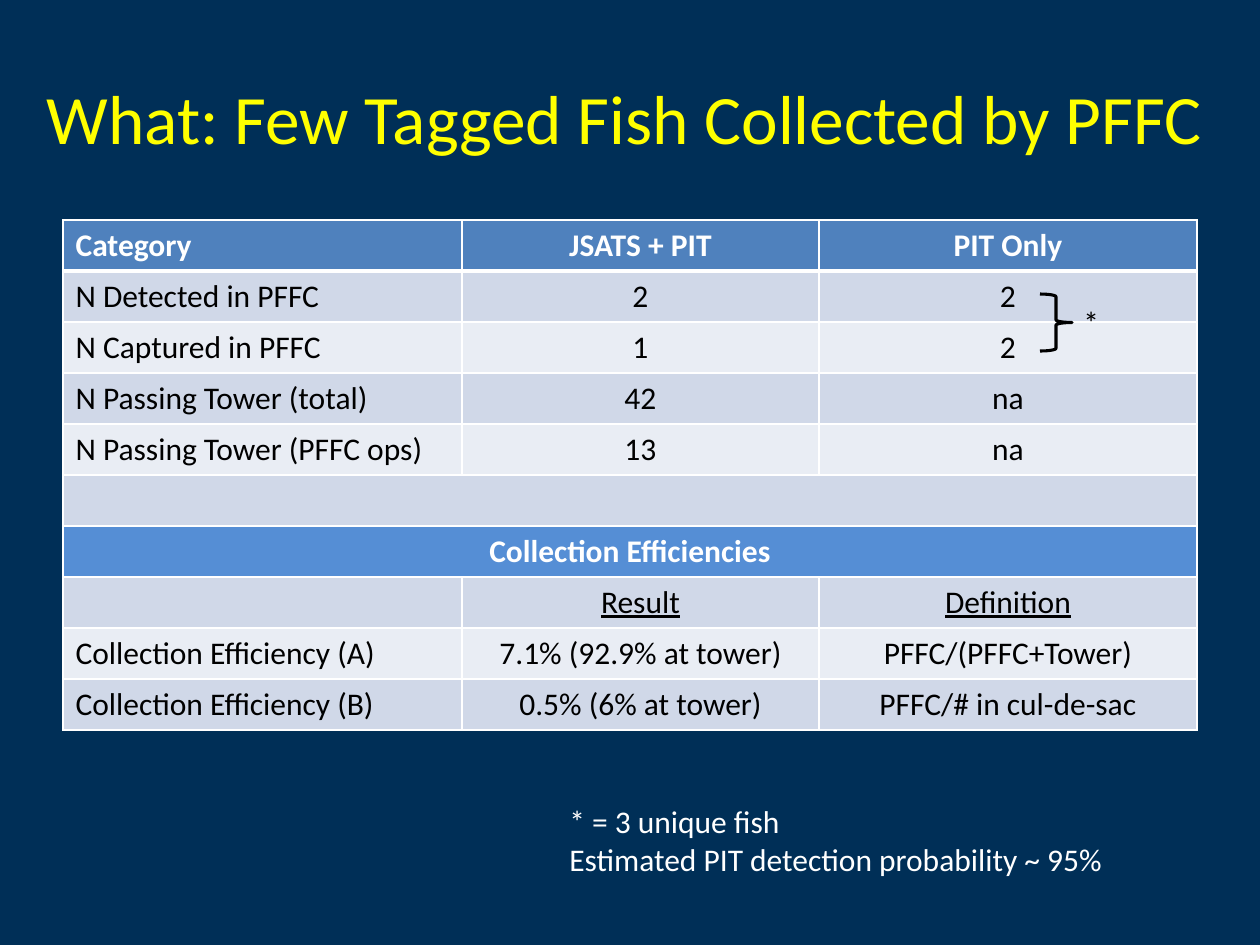
import pptx
import pptx.util
import pptx.dml.color
import pptx.enum.text
import pptx.enum.shapes
import pptx.oxml
import pptx.oxml.ns
from dataclasses import dataclass

ALIGN = pptx.enum.text.PP_ALIGN
ANCHOR = pptx.enum.text.MSO_ANCHOR


@dataclass(frozen=True)
class Theme:
    face: str = "Calibri"
    back: str = "002F57"
    title: str = "FFFF00"
    light: str = "FFFFFF"
    dark: str = "000000"
    head: str = "4F81BD"
    band: str = "558ED5"
    odd: str = "D0D8E8"
    even: str = "E9EDF4"
    big: float = 39.6
    small: float = 18


def px(num):
    return round(num * 914400 / 126)


def tint(code):
    return pptx.dml.color.RGBColor.from_string(code)


def apply(target, form):
    for name, value in form.items():
        setattr(target, name, value)


class Deck:
    def __init__(self, theme):
        self.theme = theme
        self.file = pptx.Presentation()
        apply(self.file, {"slide_width": px(1260), "slide_height": px(945)})
        self.slide = self.file.slides.add_slide(self.file.slide_layouts[6])
        self.paint(self.slide.background.fill, theme.back)

    def paint(self, fill, code):
        fill.solid()
        fill.fore_color.rgb = tint(code)

    def label(self, para, words, size, color, align=ALIGN.LEFT, **form):
        para.alignment = align
        if not words:
            return
        run = para.add_run()
        run.text = words
        apply(run.font, {"name": self.theme.face, "size": pptx.util.Pt(size), **form})
        run.font.color.rgb = tint(color)

    def text(self, place, lines, size, color, align=ALIGN.LEFT, **form):
        frame = self.slide.shapes.add_textbox(*map(px, place)).text_frame
        apply(frame, {"word_wrap": False, **form})
        for num, line in enumerate(lines):
            para = frame.add_paragraph() if num else frame.paragraphs[0]
            self.label(para, line, size, color, align)

    def edge(self, cell, **wide):
        props = cell._tc.get_or_add_tcPr()
        for spot, side in enumerate("LRTB"):
            width = pptx.util.Pt(wide.get(side, 1))
            props.insert(spot, pptx.oxml.parse_xml(
                f'<a:ln{side} {pptx.oxml.ns.nsdecls("a")} w="{width}"><a:solidFill>'
                f'<a:srgbClr val="{self.theme.light}"/></a:solidFill></a:ln{side}>'))

    def table(self, left, top, cols, high, rows):
        look = self.theme
        grid = self.slide.shapes.add_table(
            len(rows), len(cols), px(left), px(top), px(sum(cols)), px(high * len(rows))).table
        for col, wide in zip(grid.columns, cols):
            col.width = px(wide)
        for r, row in enumerate(rows):
            grid.rows[r].height = px(high)
            span = len(row) == 1
            band = span and row[0]
            strong = r == 0 or bool(band)
            under = row[0] == "" and not span
            fill = look.head if r == 0 else look.band if band else look.odd if r % 2 else look.even
            for c in range(len(cols)):
                cell = grid.cell(r, c)
                self.paint(cell.fill, fill)
                self.edge(cell, **{0: {"B": 3}, 1: {"T": 3}}.get(r, {}))
            if span:
                grid.cell(r, 0).merge(grid.cell(r, len(cols) - 1))
            for c, words in enumerate(row):
                self.label(grid.cell(r, c).text_frame.paragraphs[0], words, look.small,
                           look.light if strong else look.dark,
                           ALIGN.CENTER if c or span else ALIGN.LEFT,
                           bold=strong, underline=under)

    def brace(self, place, color, width):
        kind = pptx.enum.shapes.MSO_SHAPE.RIGHT_BRACE
        shape = self.slide.shapes.add_shape(kind, *map(px, place))
        shape.shadow.inherit = False
        shape.fill.background()
        shape.line.color.rgb = tint(color)
        shape.line.width = pptx.util.Pt(width)


ROWS = [
    ("Category", "JSATS + PIT", "PIT Only"),
    ("N Detected in PFFC", "2", "2"),
    ("N Captured in PFFC", "1", "2"),
    ("N Passing Tower (total)", "42", "na"),
    ("N Passing Tower (PFFC ops)", "13", "na"),
    ("",),
    ("Collection Efficiencies",),
    ("", "Result", "Definition"),
    ("Collection Efficiency (A)", "7.1% (92.9% at tower)", "PFFC/(PFFC+Tower)"),
    ("Collection Efficiency (B)", "0.5% (6% at tower)", "PFFC/# in cul-de-sac"),
]


def main():
    look = Theme()
    deck = Deck(look)
    deck.text((21, 38, 1207, 158), ["What: Few Tagged Fish Collected by PFFC"], look.big,
              look.title, ALIGN.CENTER, word_wrap=True, vertical_anchor=ANCHOR.MIDDLE)
    deck.table(63, 220, (399, 357, 378), 51, ROWS)
    deck.text((1071, 297, 42, 50), ["*"], look.small, look.dark)
    deck.brace((1040, 294, 32, 57), look.dark, 1.75)
    deck.text((557, 796, 582, 89),
              ["* = 3 unique fish", "Estimated PIT detection probability ~ 95%"],
              look.small, look.light)
    deck.file.save("out.pptx")


if __name__ == "__main__":
    main()
